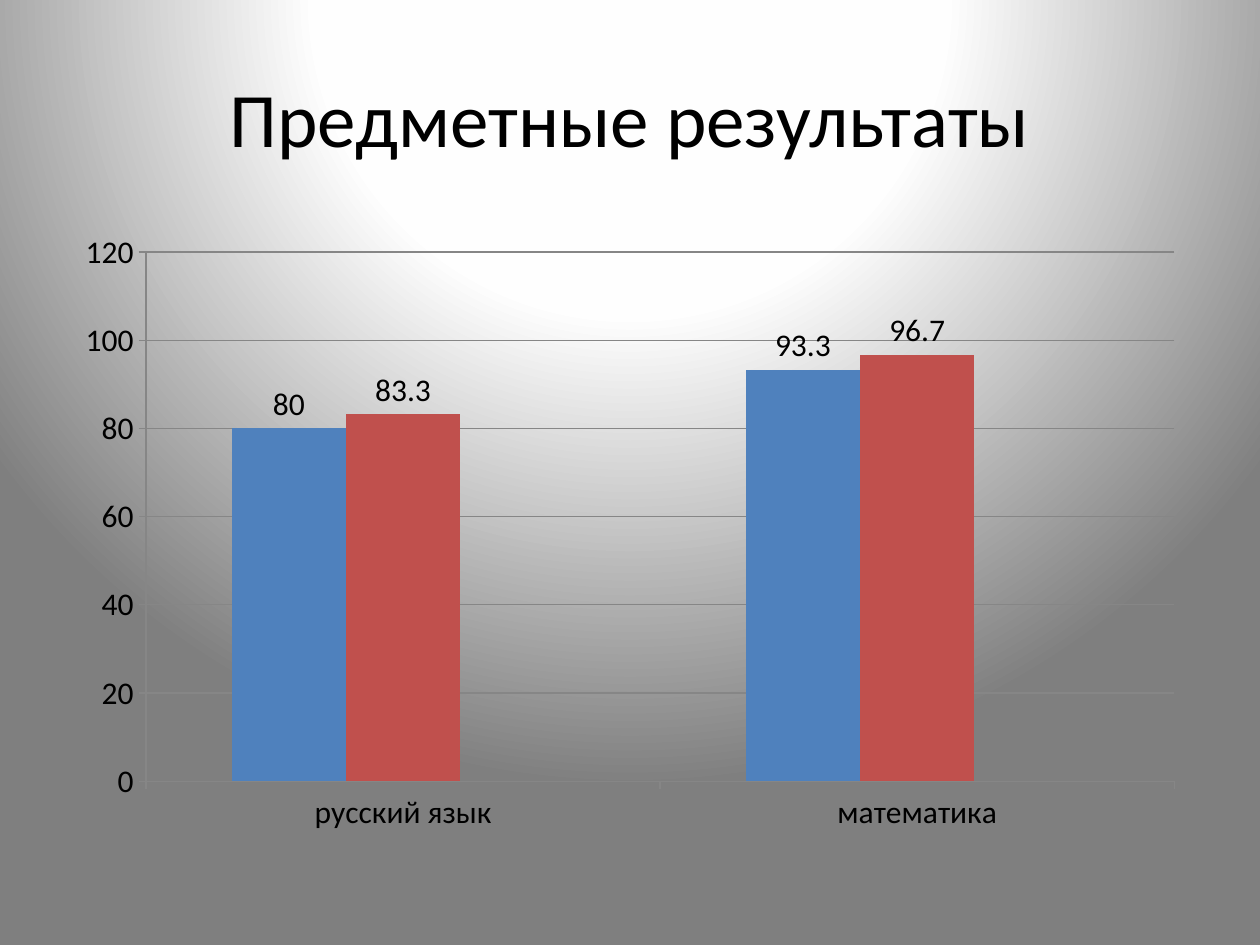
from lxml import etree
from pptx import Presentation
from pptx import util as u
from pptx.chart import data as chart_data
from pptx.dml.color import RGBColor
from pptx.enum import chart as charts, text
from pptx.oxml import ns

BLACK = RGBColor(0x00, 0x00, 0x00)
GRID_GRAY = RGBColor(0x86, 0x86, 0x86)
BLUE = RGBColor(0x4F, 0x81, 0xBD)
RED = RGBColor(0xC0, 0x50, 0x4D)
GREEN = RGBColor(0x9B, 0xBB, 0x59)
WHITE = RGBColor(0xFF, 0xFF, 0xFF)
NEAR_WHITE = RGBColor(0xFE, 0xFE, 0xFE)
GRAY = RGBColor(0x7F, 0x7F, 0x7F)

FONT = "Calibri"
BACKGROUND_STOPS = [(0, WHITE), (40, NEAR_WHITE), (100, GRAY)]
GRADIENT_CENTER = {"l": 50, "t": -80, "r": 50, "b": 180}
SUBJECTS = ["русский язык", "математика"]
SERIES = [
    ("Series 1", [80, 93.3], BLUE),
    ("Series 2", [83.3, 96.7], RED),
    ("Series 3", [None, None], GREEN),
]


def set_values(target, values):
    for name, value in values.items():
        setattr(target, name, value)


def format_font(font, size):
    set_values(font, {"name": FONT, "size": u.Pt(size)})
    font.color.rgb = BLACK


def format_line(line):
    line.color.rgb = GRID_GRAY
    line.width = u.Pt(0.75)


def percent(value):
    return str(value * 1000)


def set_background(slide):
    slide.background.fill.gradient()
    gradient = next(slide.element.iter(ns.qn("a:gradFill")))
    for child in list(gradient):
        gradient.remove(child)
    stops = etree.SubElement(gradient, ns.qn("a:gsLst"))
    for position, color in BACKGROUND_STOPS:
        stop = etree.SubElement(stops, ns.qn("a:gs"), pos=percent(position))
        etree.SubElement(stop, ns.qn("a:srgbClr"), val=str(color))
    circle = etree.SubElement(gradient, ns.qn("a:path"))
    circle.set("path", "circle")
    center = {side: percent(value) for side, value in GRADIENT_CENTER.items()}
    etree.SubElement(circle, ns.qn("a:fillToRect"), center)


def add_title(slide, wording):
    title = slide.shapes.title
    set_values(title, {
        "left": u.Inches(0.5), "top": u.Inches(0.3),
        "width": u.Inches(9), "height": u.Inches(1.25),
    })
    title.text_frame.text = wording
    title.text_frame.vertical_anchor = text.MSO_ANCHOR.MIDDLE
    paragraph = title.text_frame.paragraphs[0]
    paragraph.alignment = text.PP_ALIGN.CENTER
    format_font(paragraph.runs[0].font, 44)


def format_axis(axis, has_gridlines):
    set_values(axis, {
        "has_major_gridlines": has_gridlines,
        "major_tick_mark": charts.XL_TICK_MARK.OUTSIDE,
        "minor_tick_mark": charts.XL_TICK_MARK.NONE,
    })
    format_line(axis.format.line)
    if has_gridlines:
        format_line(axis.major_gridlines.format.line)


def format_series(series, color):
    series.format.fill.solid()
    series.format.fill.fore_color.rgb = color
    set_values(series.data_labels, {
        "show_value": True,
        "position": charts.XL_LABEL_POSITION.OUTSIDE_END,
    })


def add_results_chart(slide):
    results = chart_data.CategoryChartData()
    results.categories = SUBJECTS
    for name, values, color in SERIES:
        results.add_series(name, values)
    chart = slide.shapes.add_chart(
        charts.XL_CHART_TYPE.COLUMN_CLUSTERED,
        u.Inches(0.5), u.Inches(1.75), u.Inches(9), u.Inches(4.95), results,
    ).chart
    set_values(chart, {"has_legend": False, "has_title": False})
    format_font(chart.font, 18)
    set_values(chart.plots[0], {
        "gap_width": 150, "overlap": 0, "vary_by_categories": False,
    })
    format_axis(chart.category_axis, False)
    format_axis(chart.value_axis, True)
    set_values(chart.value_axis, {
        "minimum_scale": 0, "maximum_scale": 120, "major_unit": 20,
    })
    for series, (name, values, color) in zip(chart.plots[0].series, SERIES):
        format_series(series, color)


def main():
    presentation = Presentation()
    set_values(presentation, {
        "slide_width": u.Inches(10), "slide_height": u.Inches(7.5),
    })
    slide = presentation.slides.add_slide(presentation.slide_layouts[5])
    set_background(slide)
    add_title(slide, "Предметные результаты")
    add_results_chart(slide)
    presentation.save("out.pptx")


if __name__ == "__main__":
    main()
